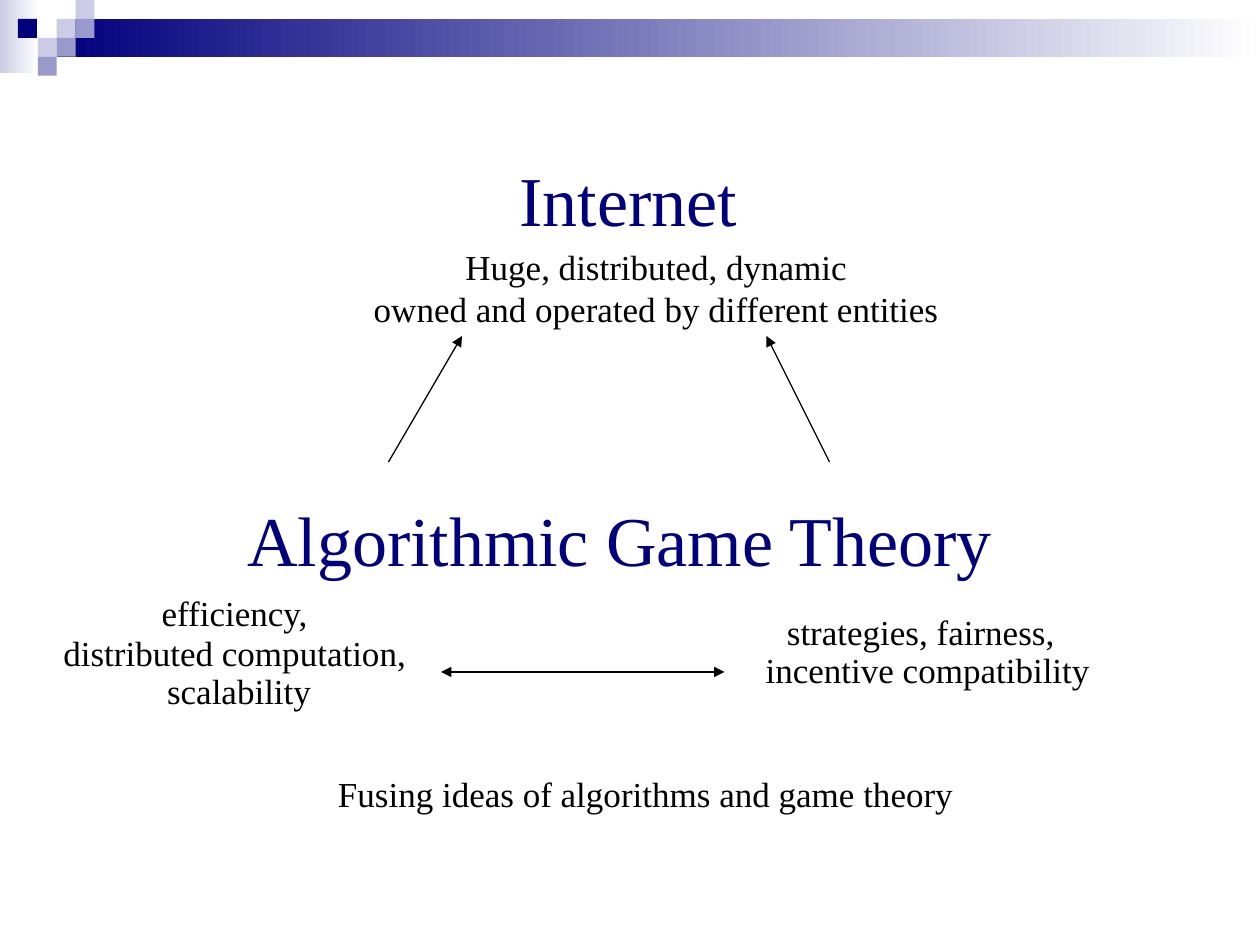
from lxml.etree import SubElement
from pptx import Presentation
from pptx.dml.color import RGBColor
from pptx.enum.shapes import MSO_CONNECTOR, MSO_SHAPE
from pptx.enum.text import MSO_ANCHOR, PP_ALIGN
from pptx.oxml.ns import qn
from pptx.util import Inches, Pt

CELL = 1 / 12
TILE = 0.15
NAVY, MID, PALE = "00007D", "9999CC", "CCCCE6"
WHITE, BLACK = "FFFFFF", "000000"
FONT = "Times New Roman"


def color(code):
    """Turn a hex string into a colour."""
    return RGBColor.from_string(code)


def grid(box, col, row, wide, high, unit=CELL):
    """Return the inches of a grid area that starts from a box."""
    return box[0] + col * unit, box[1] + row * unit, wide * unit, high * unit


def block(slide, area, *fills):
    """Draw a plain rectangle with one fill or a gradient of two."""
    shape = slide.shapes.add_shape(MSO_SHAPE.RECTANGLE, *map(Inches, area))
    shape.shadow.inherit = False
    shape.line.fill.background()
    if len(fills) == 1:
        shape.fill.solid()
        shape.fill.fore_color.rgb = color(fills[0])
        return
    shape.fill.gradient()
    shape.fill.gradient_angle = 0
    for stop, code in zip(shape.fill.gradient_stops, fills):
        stop.color.rgb = color(code)


def write(slide, area, *paras, size=20, tint=BLACK, align=PP_ALIGN.CENTER,
          anchor=MSO_ANCHOR.TOP, gap=0, drop=0, space=None, indent=None, lead=None):
    """Place formatted paragraphs, with line breaks at each newline."""
    frame = slide.shapes.add_textbox(*map(Inches, area)).text_frame
    frame.word_wrap = True
    frame.vertical_anchor = anchor
    frame.margin_top = Inches(0.05 + drop)
    for n, para in enumerate(paras):
        part = frame.add_paragraph() if n else frame.paragraphs[0]
        part.alignment = align
        part.line_spacing = space
        part.space_before = Pt(gap if n else 0)
        if indent:
            props = part._p.get_or_add_pPr()
            for name, inch in zip(("marL", "indent"), indent):
                props.set(name, str(Inches(inch)))
        if lead:
            part.add_run().text = " "
        for k, line in enumerate(para.split("\n")):
            if k:
                part.add_line_break()
            part.add_run().text = line
        for run in part.runs:
            run.font.name = FONT
            run.font.size = Pt(size)
            run.font.color.rgb = color(tint)
        if lead:
            part.runs[0].font.size = Pt(lead)


def arrow(slide, box, start, end, width=0.75):
    """Draw an arrow between two grid points of a box."""
    ends = [Inches(box[i] + spot[i] * CELL) for spot in (start, end) for i in (0, 1)]
    link = slide.shapes.add_connector(MSO_CONNECTOR.STRAIGHT, *ends)
    link.line.width = Pt(width)
    link.line.color.rgb = color(BLACK)
    SubElement(link.line._get_or_add_ln(), qn("a:tailEnd"), type="triangle")
    SubElement(link._element.spPr, qn("a:effectLst"))


def banner(slide, box):
    """Draw the fading bar and its tiles."""
    block(slide, grid(box, 0, 0, 2.05, 3.87, TILE), PALE, WHITE)
    block(slide, grid(box, 3, 1, 63.67, 2, TILE), NAVY, WHITE)
    tiles = ((3, 1, PALE), (4, 0, PALE), (4, 1, MID), (2, 2, PALE),
             (0.95, 1, NAVY), (3, 2, MID), (2, 3, MID))
    for col, row, fill in tiles:
        block(slide, grid(box, col, row, 1, 1, TILE), fill)


def title(slide, box):
    """Place the two large headings."""
    write(slide, box, " Internet", "Algorithmic Game Theory", size=40, tint=NAVY,
          anchor=MSO_ANCHOR.MIDDLE, gap=146, drop=0.1)


def notes(slide, box):
    """Place the ideas around the headings."""
    write(slide, grid(box, 0, 55, 41, 30),
          "efficiency, \ndistributed computation, \nscalability",
          space=0.9, indent=(0.38, -0.1), lead=28)
    write(slide, grid(box, 66, 58, 41, 18),
          "strategies, fairness, incentive compatibility ",
          space=0.9, indent=(0.38, -0.18))
    write(slide, grid(box, 31, 73, 64, 5.2),
          "Fusing ideas of algorithms and game theory", align=PP_ALIGN.LEFT)
    write(slide, grid(box, 31, 22.8, 63, 9.2),
          "Huge, distributed, dynamic\nowned and operated by different entities")


def links(slide, box):
    """Join the three corners with arrows."""
    arrow(slide, box, (79, 44), (73, 32))
    arrow(slide, box, (37, 44), (44, 32))
    arrow(slide, box, (43, 64), (69, 64))
    arrow(slide, box, (47, 64), (42, 64), width=1)


def main():
    """Build and save the slide."""
    deck = Presentation()
    deck.slide_width, deck.slide_height = Inches(10), Inches(7.5)
    slide = deck.slides.add_slide(deck.slide_layouts[6])
    page = (0, 0, 10, 7.5)
    banner(slide, page)
    title(slide, grid(page, 8, 4, 102, 61))
    notes(slide, page)
    links(slide, page)
    deck.save("out.pptx")


if __name__ == "__main__":
    main()
